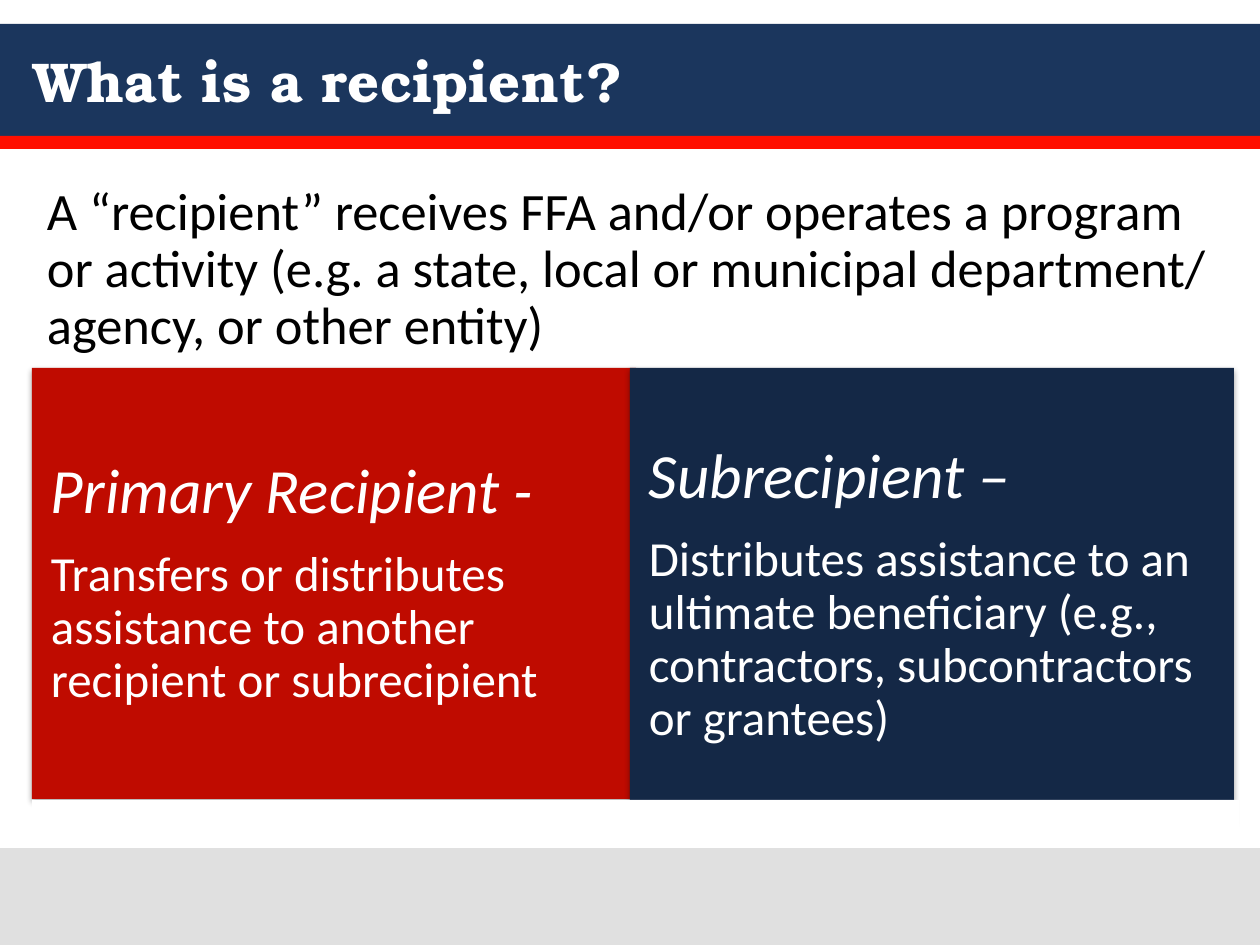
from dataclasses import dataclass

from lxml import etree
from pptx import Presentation
from pptx.dml.color import RGBColor
from pptx.enum.shapes import MSO_SHAPE
from pptx.enum.text import MSO_ANCHOR, PP_ALIGN
from pptx.oxml import parse_xml
from pptx.oxml.ns import nsdecls
from pptx.util import Emu, Pt

RECT = MSO_SHAPE.RECTANGLE
MIDDLE = MSO_ANCHOR.MIDDLE
LEFT = PP_ALIGN.LEFT

WHITE = RGBColor(0xFF, 0xFF, 0xFF)
BLACK = RGBColor(0x00, 0x00, 0x00)
NAVY = RGBColor(0x1B, 0x36, 0x5D)
DARK_NAVY = RGBColor(0x14, 0x28, 0x46)
RED = RGBColor(0xFF, 0x0F, 0x00)
DARK_RED = RGBColor(0xBF, 0x0B, 0x00)
GREY = RGBColor(0xE0, 0xE0, 0xE0)

SLIDE_W, SLIDE_H = 1260, 945
TITLE_FONT, BODY_FONT = "TeX Gyre Bonum", "Calibri"


@dataclass
class Box:
    x: int
    y: int
    w: int
    h: int
    fill: RGBColor


@dataclass
class Panel:
    box: Box
    heading: str
    body: str


BARS = [
    Box(0, 24, SLIDE_W, 112, NAVY),
    Box(0, 136, SLIDE_W, 13, RED),
    Box(0, 848, SLIDE_W, 97, GREY),
]
INTRO = Box(32, 168, 1207, 205, WHITE)
FOOT_STRIP = Box(32, 800, 1207, 48, WHITE)
PANELS = [
    Panel(Box(32, 368, 604, 431, DARK_RED), "Primary Recipient -",
          "Transfers or distributes assistance to another recipient or subrecipient"),
    Panel(Box(630, 368, 604, 454, DARK_NAVY), "Subrecipient –",
          "Distributes assistance to an ultimate beneficiary "
          "(e.g., contractors, subcontractors or grantees)"),
]


def px(n: int) -> Emu:
    return Emu(round(n * 914400 / 126))


def add_box(s, box: Box):
    sp = s.shapes.add_shape(RECT, px(box.x), px(box.y), px(box.w), px(box.h))
    sp.shadow.inherit = False
    sp.fill.solid()
    sp.fill.fore_color.rgb = box.fill
    sp.line.fill.background()
    return sp


def add_shadow(sp) -> None:
    effects = sp._element.spPr.find("{*}effectLst")
    shadow = parse_xml(
        f'<a:outerShdw {nsdecls("a")} blurRad="{Pt(3.1)}" dist="{Pt(1.8)}" '
        'dir="5400000" rotWithShape="0"/>')
    color = etree.SubElement(shadow, shadow.tag.replace("outerShdw", "srgbClr"), val="000000")
    etree.SubElement(color, shadow.tag.replace("outerShdw", "alpha"), val="35000")
    effects.append(shadow)


def set_frame(sp, inset: int):
    tf = sp.text_frame
    tf.word_wrap = True
    tf.vertical_anchor = MIDDLE
    tf.margin_left = tf.margin_right = tf.margin_top = tf.margin_bottom = px(inset)
    return tf


def write(p, text: str, *, size: int, color: RGBColor, font: str = BODY_FONT,
          bold: bool = False, italic: bool = False,
          spacing: float = 0.9, after: float = 0.35) -> None:
    p.alignment = LEFT
    p.line_spacing = spacing
    p.space_before = Pt(0)
    p.space_after = Pt(round(size * after, 1))
    r = p.add_run()
    r.text = text
    r.font.name = font
    r.font.size = Pt(size)
    r.font.bold = bold
    r.font.italic = italic
    r.font.color.rgb = color


def add_panel(s, panel: Panel) -> None:
    sp = add_box(s, panel.box)
    add_shadow(sp)
    tf = set_frame(sp, 19)
    write(tf.paragraphs[0], panel.heading, size=36, color=WHITE, italic=True)
    write(tf.add_paragraph(), panel.body, size=28, color=WHITE)


def main() -> None:
    prs = Presentation()
    prs.slide_width, prs.slide_height = px(SLIDE_W), px(SLIDE_H)
    s = prs.slides.add_slide(prs.slide_layouts[5])

    # Header and footer bars
    for bar in BARS:
        add_box(s, bar)

    # Title, raised above the header bar
    title = s.shapes.title
    title.left, title.top, title.width, title.height = px(21), px(24), px(1218), px(113)
    s.shapes._spTree.append(title._element)
    tf = set_frame(title, 6)
    tf.margin_left = tf.margin_right = px(13)
    write(tf.paragraphs[0], "What is a recipient?", size=32, color=WHITE,
          font=TITLE_FONT, bold=True, spacing=1.0, after=0)

    # Definition
    tf = set_frame(add_box(s, INTRO), 15)
    write(tf.paragraphs[0],
          "A “recipient” receives FFA and/or operates a program or activity "
          "(e.g. a state, local or municipal department/ agency, or other entity)",
          size=30, color=BLACK)

    # Recipient types, trimmed by the strip below
    for panel in PANELS:
        add_panel(s, panel)
    add_box(s, FOOT_STRIP)

    prs.save("out.pptx")


if __name__ == "__main__":
    main()
